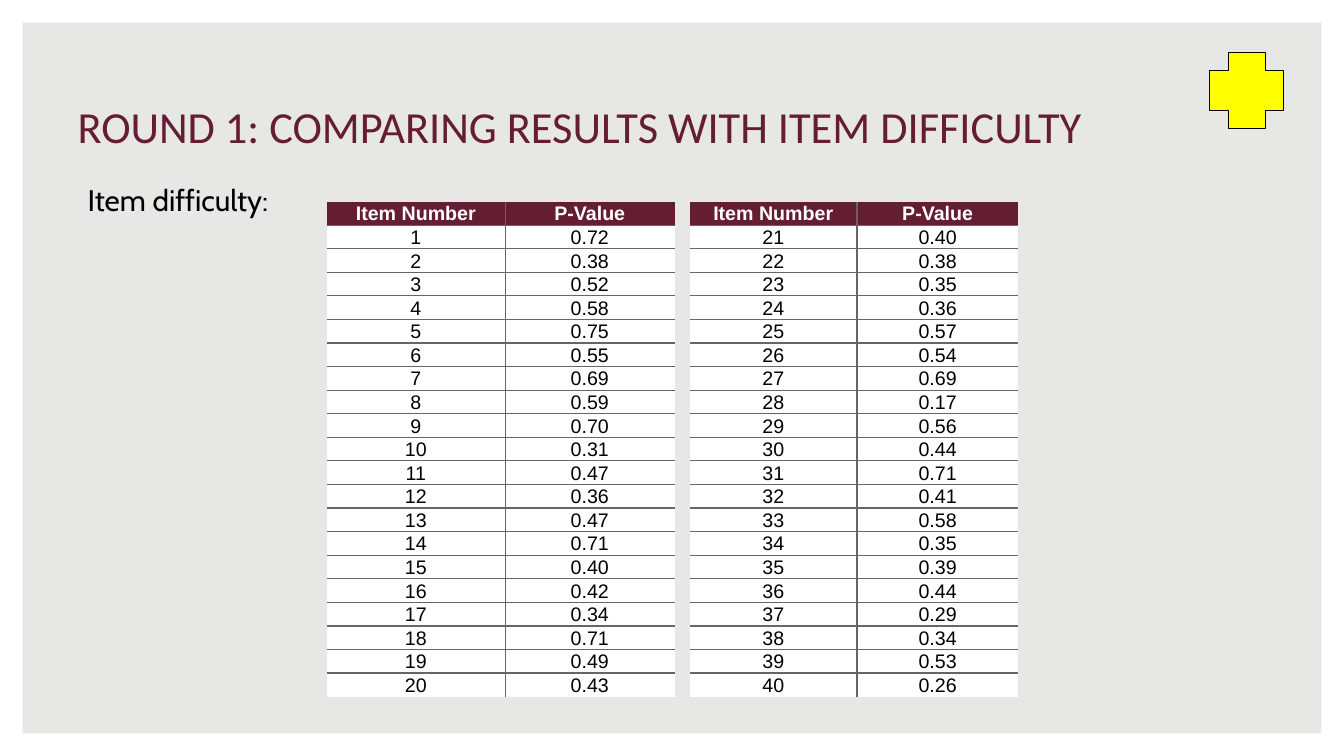
from dataclasses import dataclass

from lxml import etree
from pptx import Presentation
from pptx.dml.color import RGBColor
from pptx.enum.shapes import MSO_SHAPE
from pptx.enum.text import MSO_ANCHOR, MSO_AUTO_SIZE, PP_ALIGN
from pptx.oxml.ns import qn
from pptx.util import Inches, Pt

FRAME, PLUS = MSO_SHAPE.FRAME, MSO_SHAPE.CROSS
LEFT, CENTER = PP_ALIGN.LEFT, PP_ALIGN.CENTER
TOP, BOTTOM = MSO_ANCHOR.TOP, MSO_ANCHOR.BOTTOM
FIT_SHAPE = MSO_AUTO_SIZE.SHAPE_TO_FIT_TEXT
TITLE_ONLY = 5


@dataclass(frozen=True)
class Theme:
    background: str = "E7E7E5"
    maroon: str = "651D32"
    grid: str = "6C6463"
    white: str = "FFFFFF"
    black: str = "000000"
    yellow: str = "FFFF00"
    title_font: str = "Calibri"
    body_font: str = "Cabin"
    table_font: str = "Arial"
    title_size: float = 31.7
    body_size: float = 21.2
    table_size: float = 14
    grid_width: float = 1
    outline_width: float = 0.75


THEME = Theme()

HEADINGS = ("Item Number", "P-Value")
ROW_HEIGHT = 0.22
TABLE_TOP = 2
P_VALUES_1_TO_20 = (
    "0.72", "0.38", "0.52", "0.58", "0.75", "0.55", "0.69", "0.59", "0.70", "0.31",
    "0.47", "0.36", "0.47", "0.71", "0.40", "0.42", "0.34", "0.71", "0.49", "0.43",
)
P_VALUES_21_TO_40 = (
    "0.40", "0.38", "0.35", "0.36", "0.57", "0.54", "0.69", "0.17", "0.56", "0.44",
    "0.71", "0.41", "0.58", "0.35", "0.39", "0.44", "0.29", "0.34", "0.53", "0.26",
)


def color(value):
    return RGBColor.from_string(value)


def write(frame, text, *, font, size, ink, bold=False, align=LEFT, before=0):
    """Put one formatted paragraph into a text frame."""
    para = frame.paragraphs[0]
    para.alignment = align
    para.space_before = Pt(before)
    span = para.add_run()
    span.text = text
    span.font.name = font
    span.font.size = Pt(size)
    span.font.bold = bold
    span.font.color.rgb = color(ink)


def add_block(slide, kind, left, top, width, height, *, fill, adjust, line=None):
    block = slide.shapes.add_shape(
        kind, Inches(left), Inches(top), Inches(width), Inches(height)
    )
    block.shadow.inherit = False
    block.adjustments[0] = adjust
    block.fill.solid()
    block.fill.fore_color.rgb = color(fill)
    if line:
        block.line.color.rgb = color(line)
        block.line.width = Pt(THEME.outline_width)
    else:
        block.line.fill.background()


def place_title(slide, text):
    title = slide.shapes.title
    title.left, title.top = Inches(0.67), Inches(0.92)
    title.width, title.height = Inches(11.89), Inches(0.64)
    frame = title.text_frame
    frame.vertical_anchor = BOTTOM
    frame.auto_size = FIT_SHAPE
    write(frame, text, font=THEME.title_font, size=THEME.title_size, ink=THEME.maroon)


def add_label(slide, text):
    box = slide.shapes.add_textbox(
        Inches(0.77), Inches(1.75), Inches(2.4), Inches(0.5)
    )
    box.text_frame.word_wrap = True
    box.text_frame.vertical_anchor = TOP
    write(box.text_frame, text, font=THEME.body_font, size=THEME.body_size,
          ink=THEME.black, before=12)


def set_borders(cell, visible):
    """Draw grid lines on the named sides (L, R, T, B) and none on the others."""
    properties = cell._tc.get_or_add_tcPr()
    for side in "LRTB":
        line = etree.SubElement(properties, qn(f"a:ln{side}"))
        if side in visible:
            line.set("w", str(Pt(THEME.grid_width)))
            fill = etree.SubElement(line, qn("a:solidFill"))
            etree.SubElement(fill, qn("a:srgbClr"), val=THEME.grid)
        else:
            etree.SubElement(line, qn("a:noFill"))


def format_cell(cell, text, *, heading, borders):
    cell.margin_left = cell.margin_right = 0
    cell.margin_top = cell.margin_bottom = 0
    cell.vertical_anchor = BOTTOM
    set_borders(cell, borders)
    cell.fill.solid()
    cell.fill.fore_color.rgb = color(THEME.maroon if heading else THEME.white)
    write(cell.text_frame, text, font=THEME.table_font, size=THEME.table_size,
          ink=THEME.white if heading else THEME.black, bold=heading, align=CENTER)


def add_value_table(slide, left, widths, first_item, p_values):
    items = [(str(number), value) for number, value in enumerate(p_values, first_item)]
    rows = [HEADINGS, *items]
    table = slide.shapes.add_table(
        len(rows), len(widths), Inches(left), Inches(TABLE_TOP),
        Inches(sum(widths)), Inches(ROW_HEIGHT * len(rows))
    ).table
    table.horz_banding = False
    for column, width in zip(table.columns, widths):
        column.width = Inches(width)
    for r, values in enumerate(rows):
        table.rows[r].height = Inches(ROW_HEIGHT)
        above = "T" if r > 0 else ""
        below = "B" if r < len(rows) - 1 else ""
        for c, text in enumerate(values):
            inner = "R" if c == 0 else "L"
            format_cell(table.cell(r, c), text, heading=r == 0,
                        borders=inner + above + below)


def main():
    deck = Presentation()
    deck.slide_width, deck.slide_height = Inches(13.33), Inches(7.5)
    slide = deck.slides.add_slide(deck.slide_layouts[TITLE_ONLY])
    slide.background.fill.solid()
    slide.background.fill.fore_color.rgb = color(THEME.background)

    add_block(slide, FRAME, 0, 0, 13.33, 7.5, fill=THEME.white, adjust=0.03)
    place_title(slide, "ROUND 1: COMPARING RESULTS WITH ITEM DIFFICULTY")
    add_label(slide, "Item difficulty:")
    add_value_table(slide, 3.24, (1.77, 1.68), 1, P_VALUES_1_TO_20)
    add_value_table(slide, 6.84, (1.66, 1.6), 21, P_VALUES_21_TO_40)
    add_block(slide, PLUS, 12, 0.52, 0.73, 0.76, fill=THEME.yellow, adjust=0.25,
              line=THEME.black)
    deck.save("out.pptx")


if __name__ == "__main__":
    main()
